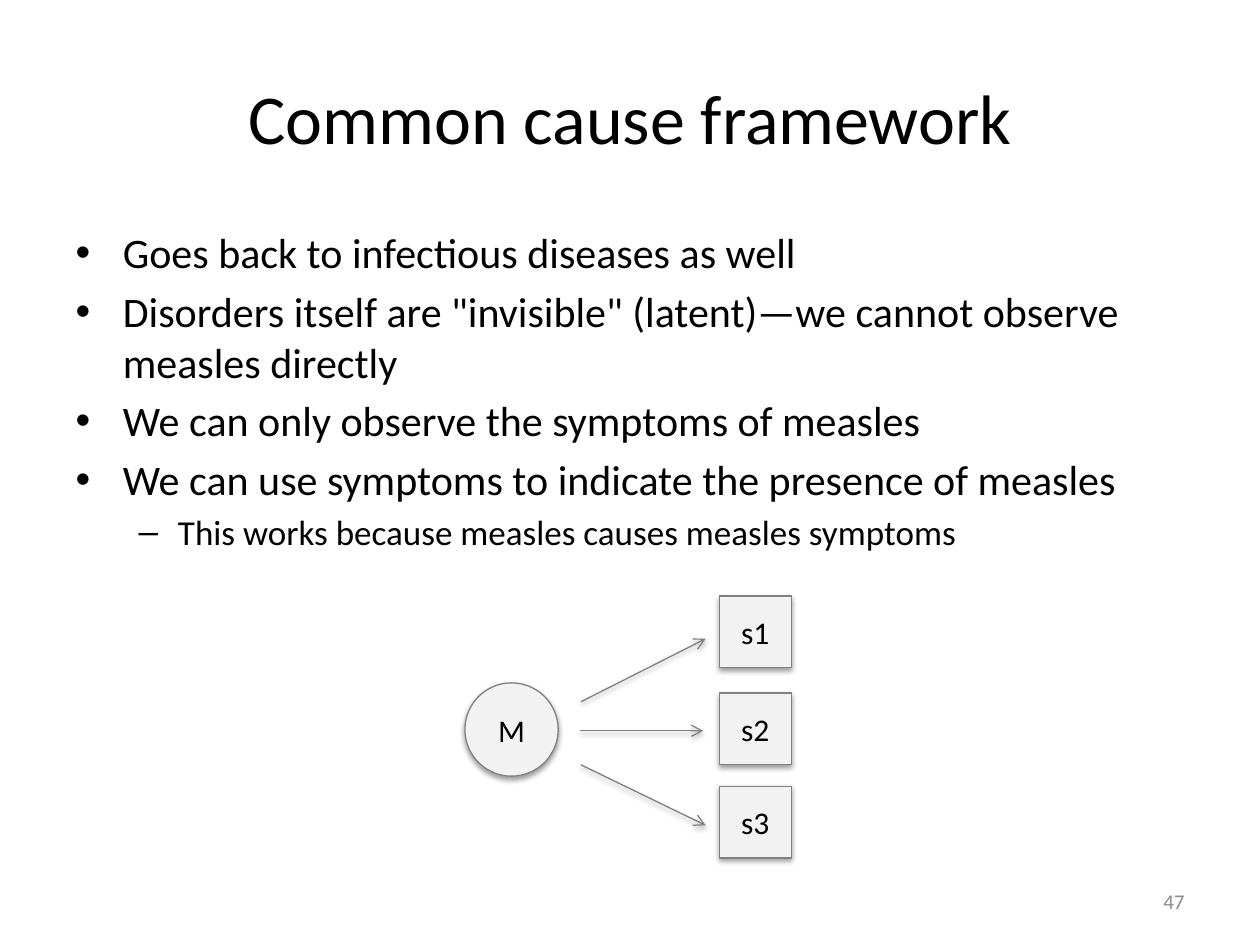
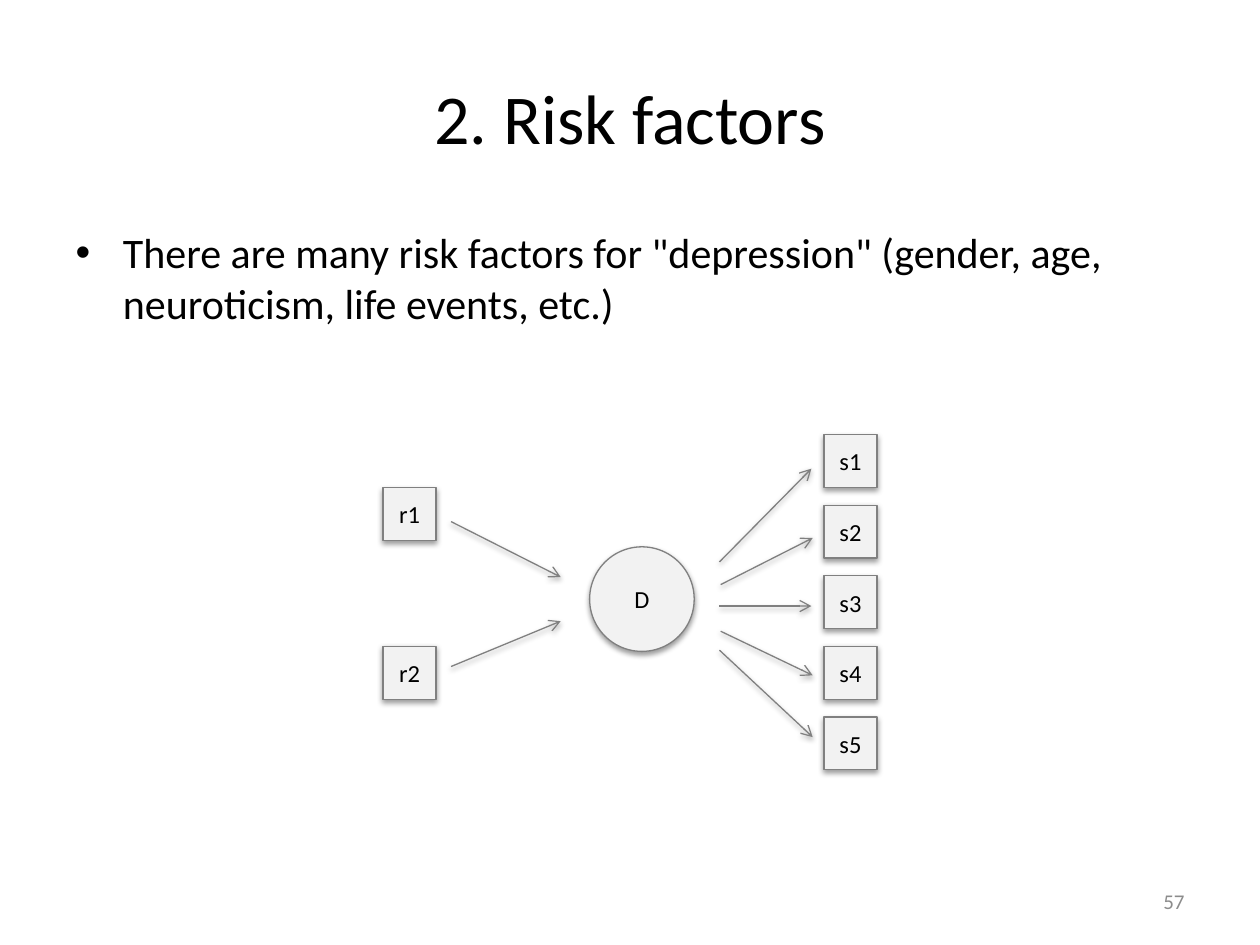
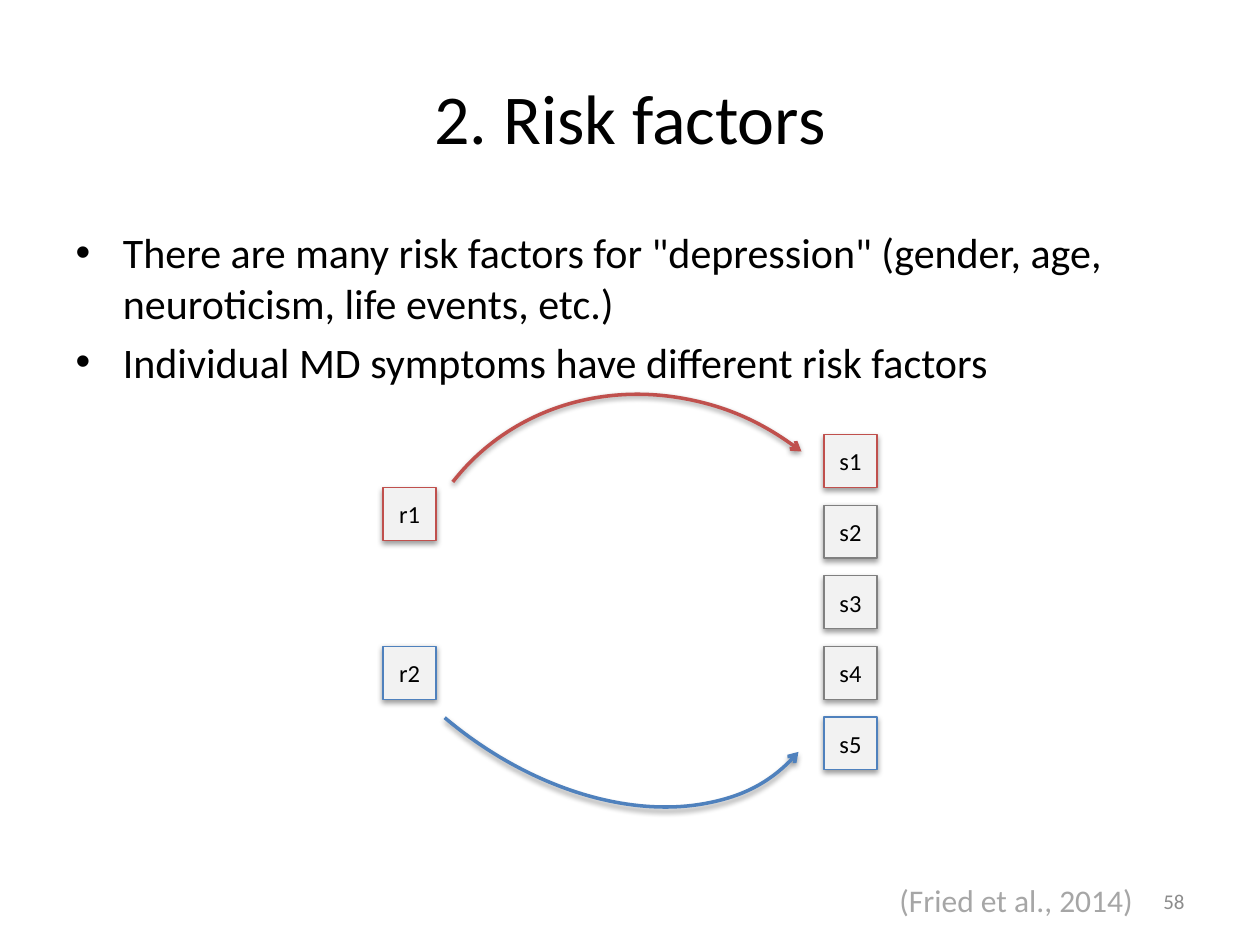
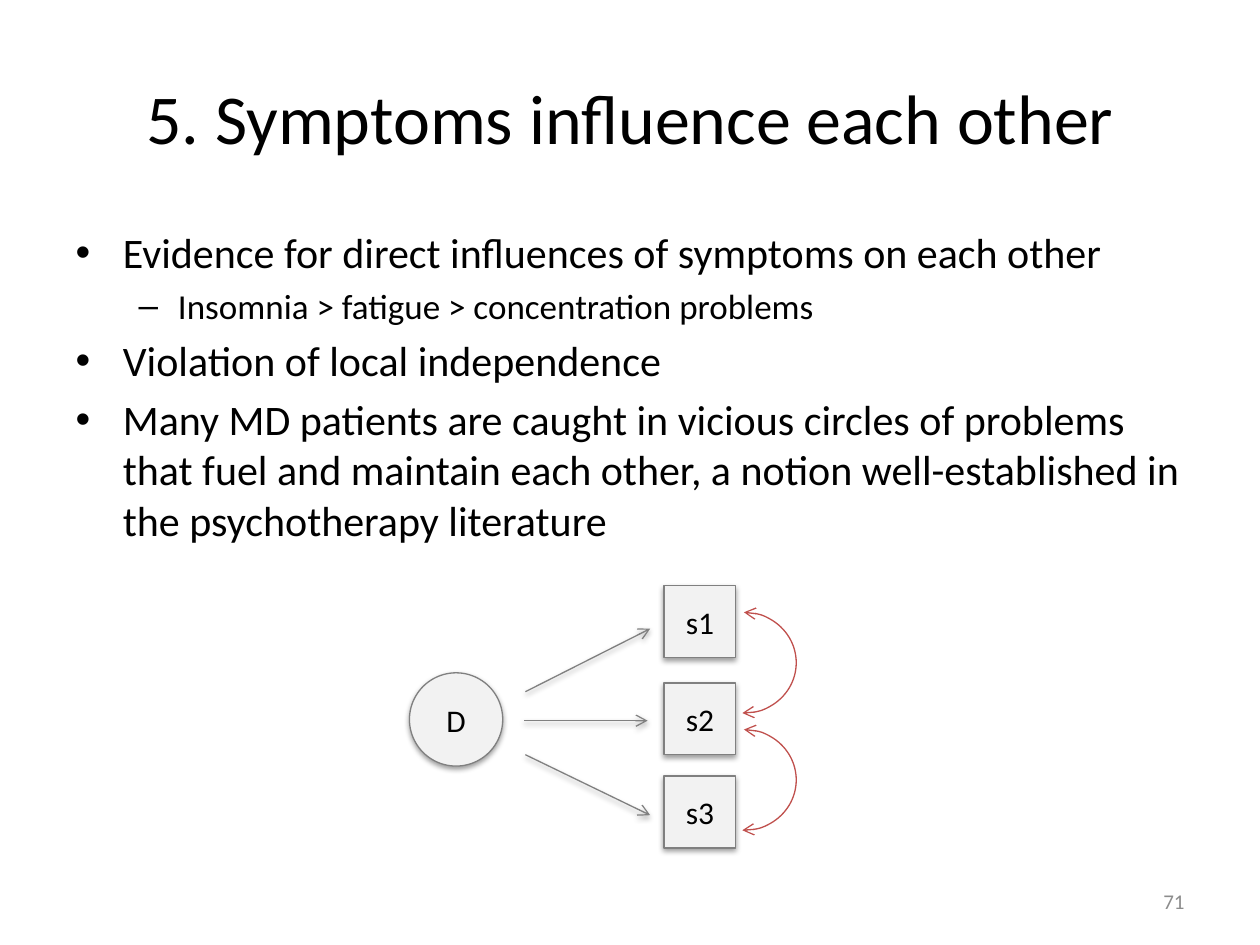
"""Build four slides on common causes, risk factors and symptom interactions."""
from lxml import etree
from pptx import Presentation
from pptx.dml.color import RGBColor
from pptx.enum.shapes import MSO_CONNECTOR, MSO_SHAPE
from pptx.enum.text import MSO_ANCHOR, PP_ALIGN
from pptx.oxml.ns import qn
from pptx.util import Inches, Pt

FONT = "Calibri"
BLACK = RGBColor(0x00, 0x00, 0x00)
NODE_FILL = RGBColor(0xF2, 0xF2, 0xF2)
GRAY = RGBColor(0x80, 0x80, 0x80)
NUMBER_GRAY = RGBColor(0x8C, 0x8C, 0x8C)
CITATION_GRAY = RGBColor(0xA6, 0xA6, 0xA6)
RED = RGBColor(0xC0, 0x50, 0x4D)
BLUE = RGBColor(0x4F, 0x81, 0xBD)
RECTANGLE, OVAL, ARC = MSO_SHAPE.RECTANGLE, MSO_SHAPE.OVAL, MSO_SHAPE.ARC
STRAIGHT = MSO_CONNECTOR.STRAIGHT
CENTER, RIGHT = PP_ALIGN.CENTER, PP_ALIGN.RIGHT
MIDDLE = MSO_ANCHOR.MIDDLE


def style_line(shape, color=GRAY, width=0.75, arrow_ends=(), shadow=True):
    """Set the outline, its arrowheads and the soft shadow below it."""
    shape.line.color.rgb = color
    shape.line.width = Pt(width)
    properties = shape.element.spPr
    for end in arrow_ends:
        etree.SubElement(properties.find(qn("a:ln")), qn(f"a:{end}"), type="arrow")
    effects = etree.SubElement(properties, qn("a:effectLst"))
    if shadow:
        outer = etree.SubElement(effects, qn("a:outerShdw"), blurRad="40000",
                                 dist="20000", dir="5400000", rotWithShape="0")
        shade = etree.SubElement(outer, qn("a:srgbClr"), val=str(BLACK))
        etree.SubElement(shade, qn("a:alpha"), val="38000")


def add_node(slide, kind, label, left, top, size, font_size, color=GRAY):
    """Add a labelled square or circle."""
    node = slide.shapes.add_shape(kind, Inches(left), Inches(top), Inches(size), Inches(size))
    node.fill.solid()
    node.fill.fore_color.rgb = NODE_FILL
    style_line(node, color)
    node.text_frame.text = label
    node.text_frame.vertical_anchor = MIDDLE
    paragraph = node.text_frame.paragraphs[0]
    paragraph.alignment = CENTER
    paragraph.font.name = FONT
    paragraph.font.size = Pt(font_size)
    paragraph.font.color.rgb = BLACK


prs = Presentation()
prs.slide_width, prs.slide_height = Inches(10), Inches(7.5)

RISK_POINT = 'There are many risk factors for "depression" (gender, age, neuroticism, life events, etc.)'
contents = [
    ("Common cause framework", "47", [
        (0, "Goes back to infectious diseases as well"),
        (0, 'Disorders itself are "invisible" (latent)—we cannot observe measles directly'),
        (0, "We can only observe the symptoms of measles"),
        (0, "We can use symptoms to indicate the presence of measles"),
        (1, "This works because measles causes measles symptoms")]),
    ("2. Risk factors", "57", [(0, RISK_POINT)]),
    ("2. Risk factors", "58", [
        (0, RISK_POINT),
        (0, "Individual MD symptoms have different risk factors")]),
    ("5. Symptoms influence each other", "71", [
        (0, "Evidence for direct influences of symptoms on each other"),
        (1, "Insomnia > fatigue > concentration problems"),
        (0, "Violation of local independence"),
        (0, "Many MD patients are caught in vicious circles of problems that fuel and "
            "maintain each other, a notion well-established in the psychotherapy literature")]),
]

for heading, page, points in contents:
    slide = prs.slides.add_slide(prs.slide_layouts[1])
    title, body = slide.placeholders
    title.left, title.top, title.width, title.height = (Inches(v) for v in (0.5, 0.3, 9, 1.25))
    title.text_frame.text = heading
    title.text_frame.vertical_anchor = MIDDLE
    paragraph = title.text_frame.paragraphs[0]
    paragraph.alignment = CENTER
    paragraph.font.name = FONT
    paragraph.font.size = Pt(40)
    paragraph.font.color.rgb = BLACK

    body.left, body.top, body.width, body.height = (Inches(v) for v in (0.5, 1.75, 9, 4.95))
    body.text_frame.text = "\n".join(point for _, point in points)
    for paragraph, (level, _) in zip(body.text_frame.paragraphs, points):
        paragraph.level = level
        paragraph.font.name = FONT
        paragraph.font.size = Pt(20 if level else 24)
        paragraph.font.color.rgb = BLACK

    page_number = slide.shapes.add_textbox(Inches(7.17), Inches(6.95), Inches(2.33), Inches(0.4))
    page_number.text_frame.word_wrap = True
    page_number.text_frame.text = page
    page_number.text_frame.vertical_anchor = MIDDLE
    paragraph = page_number.text_frame.paragraphs[0]
    paragraph.alignment = RIGHT
    paragraph.font.name = FONT
    paragraph.font.size = Pt(12)
    paragraph.font.color.rgb = NUMBER_GRAY

cause_slide, risk_slide, direct_slide, influence_slide = prs.slides

cause_arrows = [(4.6, 5.8, 5.58, 5.8), (4.61, 5.57, 5.6, 5.07), (4.61, 6.07, 5.6, 6.55)]
risk_arrows = [(5.71, 4.46, 6.44, 3.72), (5.72, 4.64, 6.45, 4.27), (5.71, 4.81, 6.44, 4.81),
               (5.72, 5.01, 6.45, 5.36), (5.71, 5.16, 6.45, 5.85),
               (3.58, 4.14, 4.45, 4.58), (3.58, 5.29, 4.45, 4.93)]
for slide, arrows, dx, dy in [(cause_slide, cause_arrows, 0, 0),
                              (risk_slide, risk_arrows, 0, 0),
                              (influence_slide, cause_arrows, -0.44, -0.08)]:
    for x1, y1, x2, y2 in arrows:
        arrow = slide.shapes.add_connector(STRAIGHT, Inches(x1 + dx), Inches(y1 + dy),
                                           Inches(x2 + dx), Inches(y2 + dy))
        style_line(arrow, arrow_ends=["tailEnd"])

for slide, disorder, dx, dy in [(cause_slide, "M", 0, 0), (influence_slide, "D", -0.44, -0.08)]:
    for number, top in enumerate([4.73, 5.5, 6.24], start=1):
        add_node(slide, RECTANGLE, f"s{number}", 5.71 + dx, top + dy, 0.57, 18)
    add_node(slide, OVAL, disorder, 3.69 + dx, 5.42 + dy, 0.74, 18)

add_node(risk_slide, OVAL, "D", 4.68, 4.34, 0.83, 14)
for slide, pair_colors in [(risk_slide, {}),
                           (direct_slide, {"r1": RED, "s1": RED, "r2": BLUE, "s5": BLUE})]:
    risks = [(f"r{i + 1}", 3.04, 3.87 + i * 1.26) for i in range(2)]
    symptoms = [(f"s{i + 1}", 6.54, 3.45 + i * 0.56) for i in range(5)]
    for label, left, top in risks + symptoms:
        add_node(slide, RECTANGLE, label, left, top, 0.42, 14, pair_colors.get(label, GRAY))

for left, top, width, height, rotation, color, end in [
        (3.31, 3.04, 3.78, 4.07, 307.9, RED, "tailEnd"),
        (2.96, 2.15, 3.21, 4.64, 130.2, BLUE, "headEnd")]:
    direct_effect = direct_slide.shapes.add_shape(ARC, Inches(left), Inches(top),
                                                  Inches(width), Inches(height))
    direct_effect.rotation = rotation
    direct_effect.fill.background()
    style_line(direct_effect, color, 2, [end])

citation = direct_slide.shapes.add_textbox(Inches(7.04), Inches(6.94), Inches(2.08), Inches(0.4))
citation.text_frame.text = "(Fried et al., 2014)"
paragraph = citation.text_frame.paragraphs[0]
paragraph.font.name = FONT
paragraph.font.size = Pt(18)
paragraph.font.color.rgb = CITATION_GRAY

for top in (4.86, 5.79):
    feedback = influence_slide.shapes.add_shape(ARC, Inches(5.49), Inches(top),
                                                Inches(0.83), Inches(0.8))
    feedback.adjustments[0] = 162
    feedback.adjustments[1] = 55.12
    feedback.fill.background()
    style_line(feedback, RED, arrow_ends=["headEnd", "tailEnd"], shadow=False)

prs.save("out.pptx")
